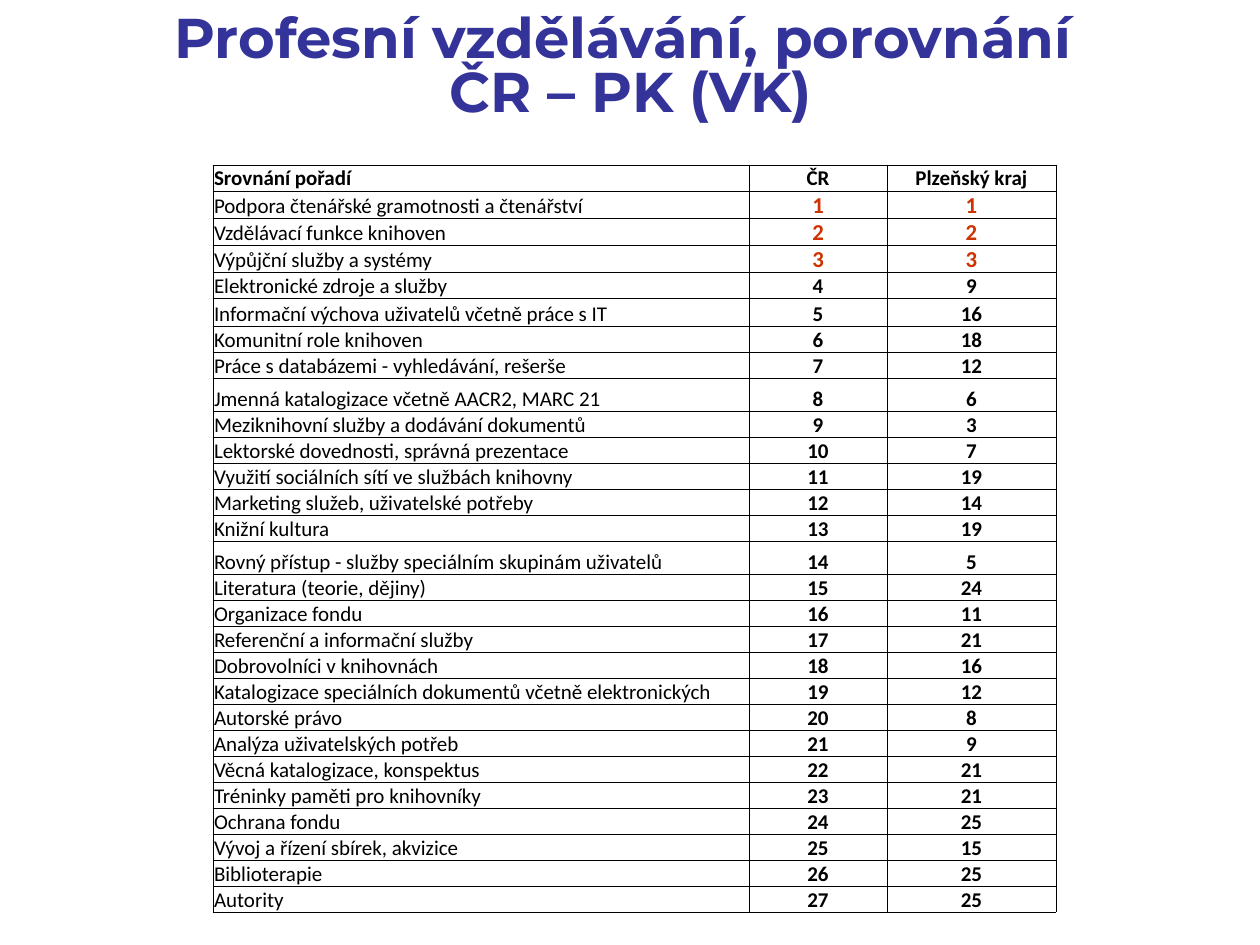
import dataclasses
import lxml.etree
import pptx
import pptx.dml.color
import pptx.enum.text
import pptx.oxml.ns
import pptx.util


@dataclasses.dataclass(frozen=True)
class Theme:
    title: str = "333399"
    ink: str = "000000"
    top: str = "CC3300"
    head_font: str = "Montserrat"
    body_font: str = "Calibri"
    head_size: int = 32
    body_size: int = 12
    top_size: int = 13
    line: float = 0.5


THEME = Theme()
SCALE = 914400 / 126
ALIGN = pptx.enum.text.PP_ALIGN
ANCHOR = pptx.enum.text.MSO_ANCHOR
COLS = [536, 138, 169]
ROW = 26
TOP_ROW = 27
TALL = {5: 28, 8: 33, 14: 33}
TOP_RANK = 3
HEADS = ["Srovnání pořadí", "ČR", "Plzeňský kraj"]
TOPICS = [
    ("Podpora čtenářské gramotnosti a čtenářství", 1),
    ("Vzdělávací funkce knihoven", 2),
    ("Výpůjční služby a systémy", 3),
    ("Elektronické zdroje a služby", 9),
    ("Informační výchova uživatelů včetně práce s IT", 16),
    ("Komunitní role knihoven", 18),
    ("Práce s databázemi - vyhledávání, rešerše", 12),
    ("Jmenná katalogizace včetně AACR2, MARC 21", 6),
    ("Meziknihovní služby a dodávání dokumentů", 3),
    ("Lektorské dovednosti, správná prezentace", 7),
    ("Využití sociálních sítí ve službách knihovny", 19),
    ("Marketing služeb, uživatelské potřeby", 14),
    ("Knižní kultura", 19),
    ("Rovný přístup - služby speciálním skupinám uživatelů", 5),
    ("Literatura (teorie, dějiny)", 24),
    ("Organizace fondu", 11),
    ("Referenční a informační služby", 21),
    ("Dobrovolníci v knihovnách", 16),
    ("Katalogizace speciálních dokumentů včetně elektronických", 12),
    ("Autorské právo", 8),
    ("Analýza uživatelských potřeb", 9),
    ("Věcná katalogizace, konspektus", 21),
    ("Tréninky paměti pro knihovníky", 21),
    ("Ochrana fondu", 25),
    ("Vývoj a řízení sbírek, akvizice", 15),
    ("Biblioterapie", 25),
    ("Autority", 25),
]


def px(count):
    return pptx.util.Emu(round(count * SCALE))


def write(frame, text, font=THEME.body_font, size=THEME.body_size,
          color=THEME.ink, bold=True, align=ALIGN.CENTER, space=0.95):
    para = frame.paragraphs[0]
    para.text = text
    para.alignment = align
    para.line_spacing = space
    for run in para.runs:
        run.font.name = font
        run.font.size = pptx.util.Pt(size)
        run.font.bold = bold
        run.font.color.rgb = pptx.dml.color.RGBColor.from_string(color)


def add_title(slide, text):
    box = slide.shapes.add_textbox(px(64), px(16), px(1134), px(106))
    frame = box.text_frame
    frame.word_wrap = True
    frame.vertical_anchor = ANCHOR.MIDDLE
    write(frame, text, font=THEME.head_font, size=THEME.head_size,
          color=THEME.title, space=0.8)


def add_edges(cell):
    name = pptx.oxml.ns.qn
    props = cell._tc.get_or_add_tcPr()
    for side in ("lnL", "lnR", "lnT", "lnB"):
        line = lxml.etree.SubElement(props, name("a:" + side))
        line.set("w", str(pptx.util.Pt(THEME.line)))
        fill = lxml.etree.SubElement(line, name("a:solidFill"))
        lxml.etree.SubElement(fill, name("a:srgbClr")).set("val", THEME.ink)


def fill_cell(cell, text, **style):
    cell.margin_left = cell.margin_right = cell.margin_top = px(1)
    cell.margin_bottom = 0
    cell.vertical_anchor = ANCHOR.BOTTOM
    add_edges(cell)
    cell.fill.background()
    write(cell.text_frame, text, **style)


def add_ranks(slide):
    rows = [HEADS] + [
        [topic, str(rank), str(local)]
        for rank, (topic, local) in enumerate(TOPICS, 1)
    ]
    sizes = [
        TALL.get(i, TOP_ROW if 1 <= i <= TOP_RANK else ROW)
        for i in range(len(rows))
    ]
    shape = slide.shapes.add_table(
        len(rows), len(COLS), px(213), px(165), px(sum(COLS)), px(sum(sizes)))
    table = shape.table
    table.first_row = table.horz_banding = False
    for col, width in zip(table.columns, COLS):
        col.width = px(width)
    for i, (row, size) in enumerate(zip(rows, sizes)):
        table.rows[i].height = px(size)
        for j, text in enumerate(row):
            style = {"align": ALIGN.CENTER if j else ALIGN.LEFT}
            if i == 0:
                style["space"] = 1.0
            elif j == 0:
                style["bold"] = False
            elif i <= TOP_RANK:
                style.update(size=THEME.top_size, color=THEME.top)
            fill_cell(table.cell(i, j), text, **style)


def main():
    deck = pptx.Presentation()
    deck.slide_width, deck.slide_height = px(1260), px(945)
    slide = deck.slides.add_slide(deck.slide_layouts[6])
    add_title(slide, "Profesní vzdělávání, porovnání \vČR – PK (VK)")
    add_ranks(slide)
    deck.save("out.pptx")


if __name__ == "__main__":
    main()
